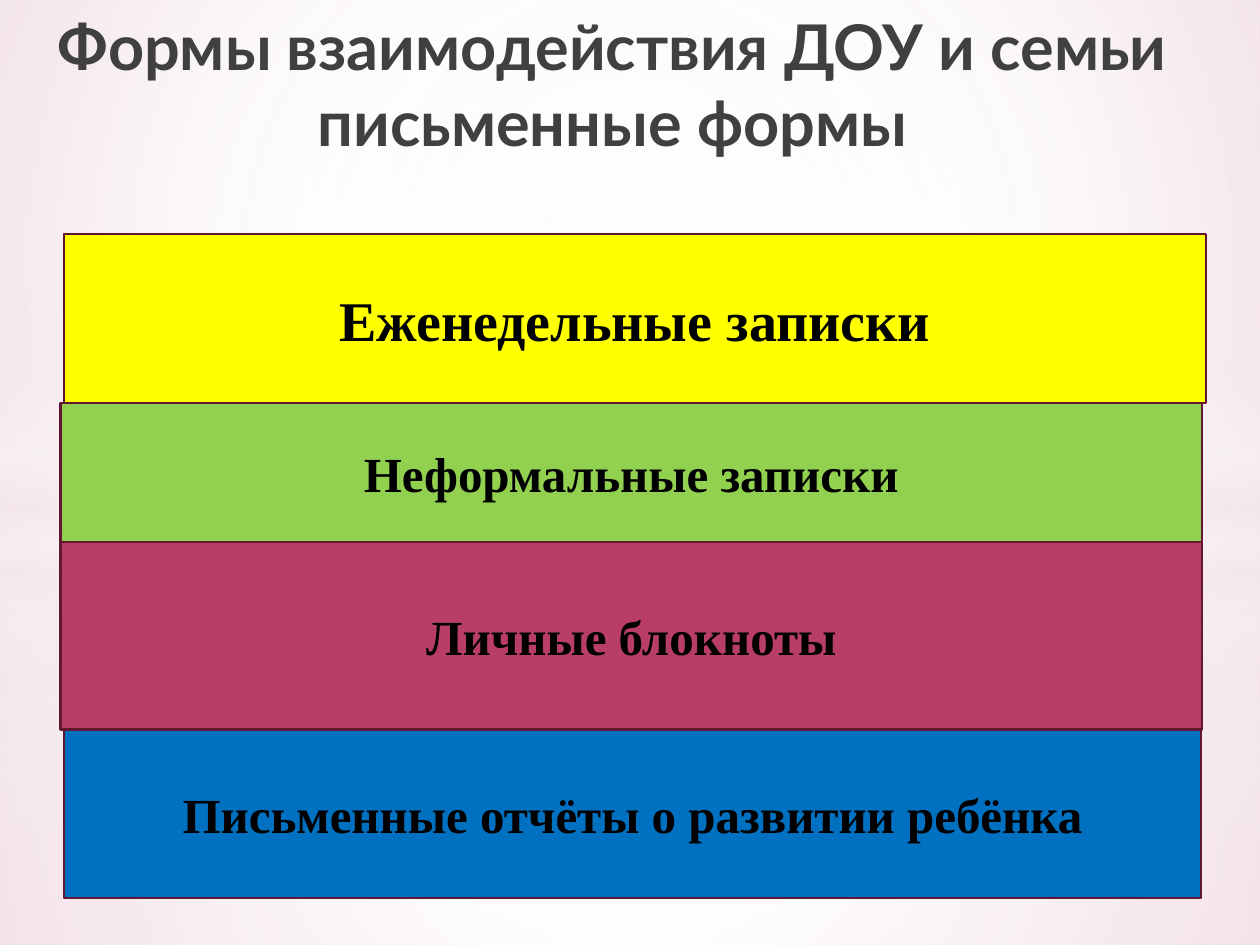
from pptx import Presentation, util as u
from pptx.dml.color import RGBColor
from pptx.enum import shapes, text
from pptx.oxml import parse_xml
from pptx.oxml.ns import nsdecls, qn

theme = {
    "head": "Lato", "body": "Times New Roman",
    "title": 36, "large": 32, "text": 28, "edge": 1.25,
    "ink": "000000", "grey": "404040", "line": "621631",
    "white": "FFFFFF", "pale": "F4E7ED", "blush": "EDDAE2", "rose": "E09DBC",
    "sun": "FFFF00", "leaf": "92D050", "berry": "B83D68", "sky": "0070C0",
}


def shade(owner, stops, rect=None):
    marks = "".join(
        f'<a:gs pos="{pos * 1000}"><a:srgbClr val="{theme[hue]}">'
        f'<a:alpha val="{alpha * 1000}"/></a:srgbClr></a:gs>'
        for pos, hue, alpha in stops)
    if rect:
        sides = " ".join(f'{side}="{part * 1000}"' for side, part in zip("ltrb", rect))
        way = f'<a:path path="circle"><a:fillToRect {sides}/></a:path>'
    else:
        way = '<a:lin ang="5400000" scaled="0"/>'
    grad = parse_xml(f'<a:gradFill {nsdecls("a")} rotWithShape="1">'
                     f'<a:gsLst>{marks}</a:gsLst>{way}</a:gradFill>')
    owner.fill.background()
    old = owner.element.find(".//" + qn("a:noFill"))
    old.getparent().replace(old, grad)


def style(frame, face, size, hue):
    for para in frame.paragraphs:
        para.alignment = text.PP_ALIGN.CENTER
        para.font.name = face
        para.font.size = u.Pt(size)
        para.font.bold = True
        para.font.color.rgb = RGBColor.from_string(hue)


deck = Presentation()
deck.slide_width, deck.slide_height = u.Inches(10), u.Inches(7.5)
cell = deck.slide_width // 100
slide = deck.slides.add_slide(deck.slide_layouts[5])
shade(slide.background, [(0, "blush", 100), (60, "white", 100), (100, "rose", 100)],
      (20, 10, 20, 60))

rect, oval = shapes.MSO_SHAPE.RECTANGLE, shapes.MSO_SHAPE.OVAL
mid = (50, 50, 50, 50)
band = [(0, "white", 0), (29, "white", 30), (45, "pale", 40),
        (55, "white", 26), (65, "pale", 60), (100, "white", 0)]
layers = []
for split, top, glow, plus in [(55.8, 41.2, 56, 0), (42.3, 29, 54, 1)]:
    low = [(0, "white", 91 + plus), (37, "white", 76 + plus), (100, "pale", 79 + plus)]
    high = [(0, "white", 89 + plus), (48, "white", 62 + plus), (100, "pale", 79 + plus)]
    halo = [(0, "white", 100), (glow, "white", 0)]
    layers += [(rect, split, 75 - split, low, mid), (rect, 0, split, high, mid),
               (rect, top, 25, band, None), (oval, 17.5, 55.8, halo, mid)]

tree = slide.slide_layout.slide_master.shapes.element
for rank, (kind, top, tall, stops, focus) in enumerate(layers):
    layer = slide.shapes.add_shape(kind, 0, int(top * cell), 100 * cell, int(tall * cell))
    layer.shadow.inherit = False
    shade(layer, stops, focus)
    layer.line.fill.background()
    layer.element.find(".//" + qn("p:cNvPr")).set("id", str(100 + rank))
    tree.insert(2 + rank, layer.element)

title = slide.shapes.title
title.left, title.top = 0, int(2.1 * cell)
title.width, title.height = int(97.2 * cell), 11 * cell
frame = title.text_frame
frame.text = "Формы взаимодействия ДОУ и семьи\vписьменные формы"
frame.word_wrap = True
frame.auto_size = text.MSO_AUTO_SIZE.NONE
frame.vertical_anchor = text.MSO_ANCHOR.BOTTOM
style(frame, theme["head"], theme["title"], theme["grey"])

bars = [
    ("Еженедельные записки", "sun", "large", 5.1, 90.6, 13.4),
    ("Неформальные записки", "leaf", "text", 4.8, 90.6, 11),
    ("Личные блокноты", "berry", "text", 4.8, 90.6, 14.9),
    ("Письменные отчёты о развитии ребёнка", "sky", "text", 5.1, 90.2, 13.4),
]
top = 18.6
for words, hue, size, left, wide, tall in bars:
    bar = slide.shapes.add_shape(rect, *(int(n * cell) for n in (left, top, wide, tall)))
    bar.shadow.inherit = False
    bar.fill.solid()
    bar.fill.fore_color.rgb = RGBColor.from_string(theme[hue])
    bar.line.color.rgb = RGBColor.from_string(theme["line"])
    bar.line.width = u.Pt(theme["edge"])
    bar.text_frame.text = words
    bar.text_frame.vertical_anchor = text.MSO_ANCHOR.MIDDLE
    style(bar.text_frame, theme["body"], theme[size], theme["ink"])
    top += tall

deck.save("out.pptx")
